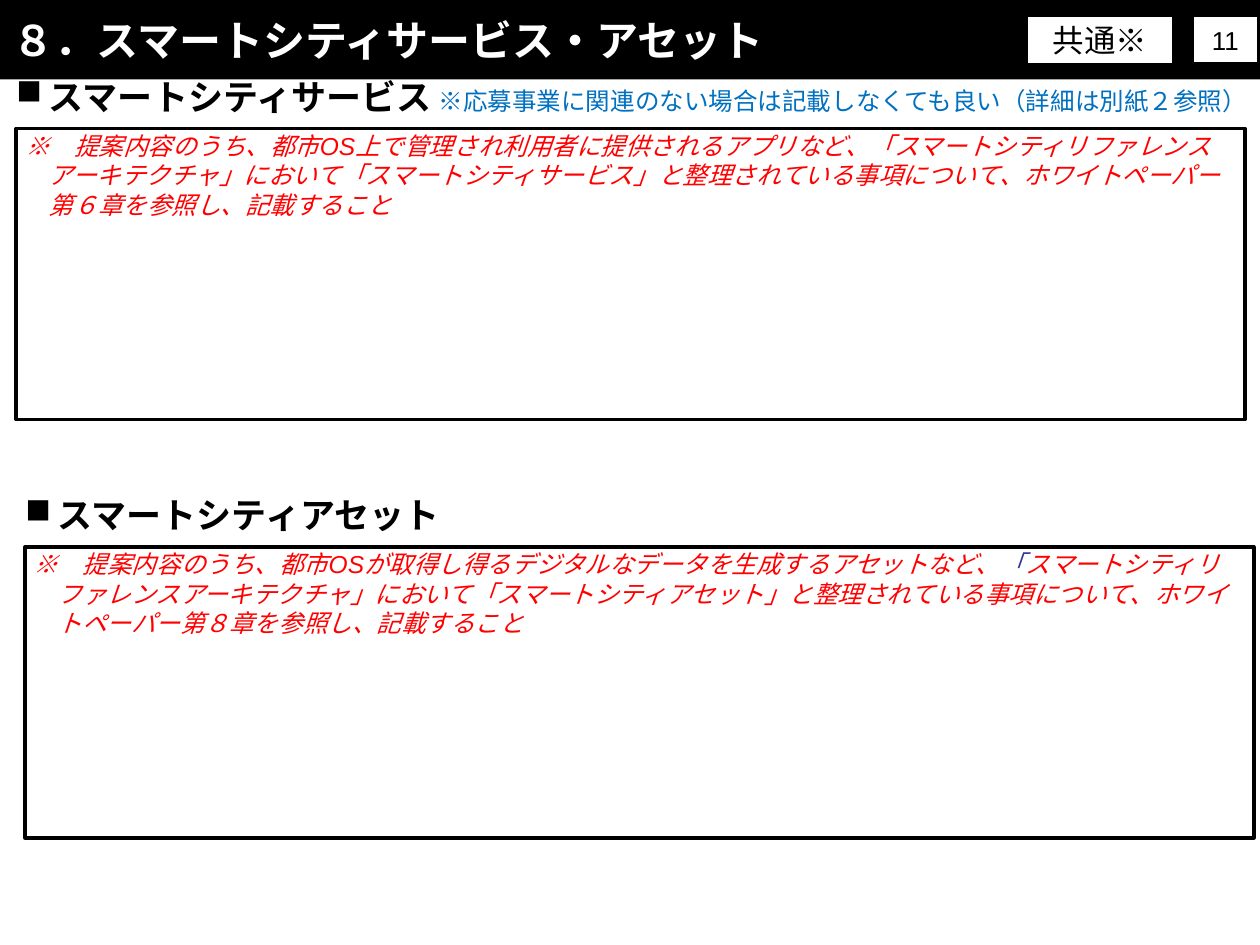
"""Build the smart city services and assets form slide."""
from lxml.etree import SubElement
from pptx import Presentation
from pptx.dml.color import RGBColor
from pptx.enum.shapes import MSO_SHAPE as SHAPE
from pptx.enum.text import MSO_ANCHOR as ANCHOR, MSO_AUTO_SIZE as AUTO, PP_ALIGN as ALIGN
from pptx.oxml.ns import qn
from pptx.util import Inches, Pt

BLACK = RGBColor(0, 0, 0)
WHITE = RGBColor(255, 255, 255)
RED = RGBColor(255, 0, 0)
BLUE = RGBColor(0, 0x70, 0xC0)
NAVY = RGBColor(0x33, 0x33, 0x99)
CJK = "Noto Sans CJK JP"

TITLE = "８．スマートシティサービス・アセット"
HINT = "※応募事業に関連のない場合は記載しなくても良い（詳細は別紙２参照）"
SECTIONS = [
    ("スマートシティサービス", [
        ("※　提案内容のうち、都市OS上で管理され利用者に提供されるアプリなど、「スマートシティリファレンス"
         "アーキテクチャ」において「スマートシティサービス」と整理されている事項について、"
         "ホワイトペーパー第６章を参照し、記載すること", RED)]),
    ("スマートシティアセット", [
        ("※　提案内容のうち、都市OSが取得し得るデジタルなデータを生成するアセットなど、", RED),
        ("「", NAVY),
        ("スマートシティリファレンスアーキテクチャ」において「スマートシティアセット」と整理されている"
         "事項について、ホワイトペーパー第８章を参照し、記載すること", RED)]),
]
SECTION_DX, SECTION_DY = 0.07, 3.32
BADGES = [("共通※", (8.15, 0.13, 1.16, 0.38), 18, 1),
          ("11", (9.47, 0.13, 0.51, 0.37), 14.8, 0.75)]

TITLE_FONT = {"size": Pt(24), "bold": True, "name": CJK}
HEADING_FONT = {"size": Pt(20), "bold": True, "name": "Cabin"}
NOTE_FONT = {"size": Pt(14), "italic": True, "name": "Arial"}
HINT_FONT = {"size": Pt(14), "name": "Arial"}


def write(tf, runs, font, align=ALIGN.LEFT, indent=0, bullet=None):
    tf.word_wrap = True
    p = tf.paragraphs[0]
    p.alignment = align
    for text, color in runs:
        r = p.add_run()
        r.text = text
        for key, value in font.items():
            setattr(r.font, key, value)
        r.font.color.rgb = color
        SubElement(r.font._element, qn("a:ea"), typeface=CJK)
    pPr = p._p.get_or_add_pPr()
    if indent:
        pPr.set("marL", str(Inches(indent)))
        pPr.set("indent", str(-Inches(indent)))
    if bullet:
        p.space_before = Pt(1)
        SubElement(pPr, qn("a:buChar"), char=bullet)


def add_box(s, at, fill=None, line=None):
    sp = s.shapes.add_shape(SHAPE.RECTANGLE, *map(Inches, at))
    sp.shadow.inherit = False
    if fill is None:
        sp.fill.background()
    else:
        sp.fill.solid()
        sp.fill.fore_color.rgb = fill
    if line is None:
        sp.line.fill.background()
    else:
        sp.line.color.rgb = BLACK
        sp.line.width = Pt(line)
    sp.text_frame.vertical_anchor = ANCHOR.MIDDLE
    return sp


def add_text(s, at, runs, font, **layout):
    tf = s.shapes.add_textbox(*map(Inches, at)).text_frame
    write(tf, runs, font, **layout)
    tf.auto_size = AUTO.SHAPE_TO_FIT_TEXT


def main():
    prs = Presentation()
    prs.slide_width, prs.slide_height = Inches(10), Inches(7.5)
    s = prs.slides.add_slide(prs.slide_layouts[6])

    header = add_box(s, (0, 0, 10, 0.63), fill=BLACK)
    write(header.text_frame, [(TITLE, WHITE)], TITLE_FONT)

    for i, (heading, note) in enumerate(SECTIONS):
        dx, dy = i * SECTION_DX, i * SECTION_DY
        add_box(s, (0.13 + dx, 1.02 + dy, 9.75, 2.31), line=2.25)
        add_text(s, (0.03 + dx, 0.55 + dy, 4.69, 0.44), [(heading, BLACK)],
                 HEADING_FONT, indent=0.26, bullet="■")
        add_text(s, (0.1 + dx, 0.99 + dy, 9.72, 0.81), note, NOTE_FONT, indent=0.19)

    for text, at, size, line in BADGES:
        badge = add_box(s, at, fill=WHITE, line=line)
        write(badge.text_frame, [(text, BLACK)], {"size": Pt(size), "name": "Arial"},
              align=ALIGN.CENTER)

    add_text(s, (3.27, 0.63, 6.73, 0.34), [(HINT, BLUE)], HINT_FONT, align=ALIGN.RIGHT)
    prs.save("out.pptx")


if __name__ == "__main__":
    main()
